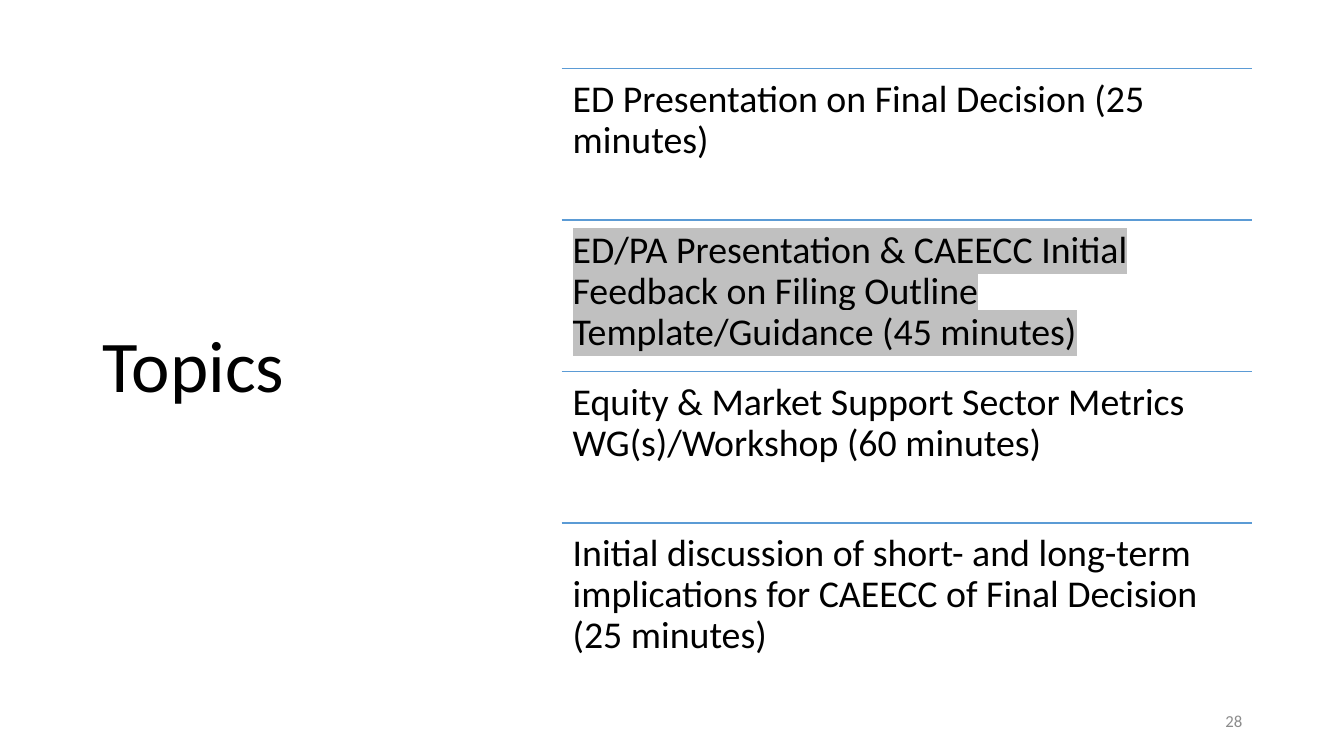
from lxml.etree import SubElement
from pptx import Presentation
from pptx.dml.color import RGBColor
from pptx.enum.shapes import MSO_CONNECTOR
from pptx.enum.text import MSO_ANCHOR, MSO_AUTO_SIZE, PP_ALIGN
from pptx.oxml import parse_xml
from pptx.oxml.ns import nsdecls, qn
from pptx.util import Inches, Pt

BLACK = RGBColor(0x00, 0x00, 0x00)
GRAY = RGBColor(0x8C, 0x8C, 0x8C)
BLUE = RGBColor(0x5B, 0x9B, 0xD5)
SILVER = RGBColor(0xC0, 0xC0, 0xC0)

TOPICS = [
    ("ED Presentation on Final Decision (25 minutes)", None),
    ("ED/PA Presentation & CAEECC Initial Feedback on Filing Outline "
     "Template/Guidance (45 minutes)", SILVER),
    ("Equity & Market Support Sector Metrics WG(s)/Workshop (60 minutes)", None),
    ("Initial discussion of short- and long-term implications for CAEECC "
     "of Final Decision (25 minutes)", None),
]
LIST_LEFT, LIST_TOP, LIST_WIDTH, ROW_HEIGHT = 5.57, 0.68, 6.85, 1.503


def write_text(shape, text, size, color=BLACK, align=PP_ALIGN.LEFT,
               anchor=MSO_ANCHOR.MIDDLE, line_spacing=0.9, inset=None, highlight=None):
    frame = shape.text_frame
    frame.word_wrap = True
    frame.auto_size = MSO_AUTO_SIZE.NONE
    frame.vertical_anchor = anchor
    if inset is not None:
        frame.margin_left = frame.margin_right = Inches(inset)
        frame.margin_top = frame.margin_bottom = Inches(inset)
    paragraph = frame.paragraphs[0]
    paragraph.alignment = align
    paragraph.line_spacing = line_spacing
    run = paragraph.add_run()
    run.text = text
    run.font.name = "Calibri"
    run.font.size = Pt(size)
    run.font.color.rgb = color
    if highlight is not None:
        fill = run.font._element.find(qn("a:solidFill"))
        fill.addnext(parse_xml(
            f'<a:highlight {nsdecls("a")}><a:srgbClr val="{highlight}"/></a:highlight>'))


presentation = Presentation()
presentation.slide_width = Inches(13.33)
presentation.slide_height = Inches(7.5)
slide = presentation.slides.add_slide(presentation.slide_layouts[5])

title = slide.shapes.title
title.left, title.top = Inches(0.92), Inches(0.61)
title.width, title.height = Inches(3.69), Inches(6.09)
write_text(title, "Topics", 52)

for row, (topic, highlight) in enumerate(TOPICS):
    top = Inches(LIST_TOP + row * ROW_HEIGHT)
    rule = slide.shapes.add_connector(
        MSO_CONNECTOR.STRAIGHT, Inches(LIST_LEFT), top, Inches(LIST_LEFT + LIST_WIDTH), top)
    rule.line.color.rgb = BLUE
    rule.line.width = Pt(1)
    SubElement(rule._element.spPr, qn("a:effectLst"))
    topic_box = slide.shapes.add_textbox(
        Inches(LIST_LEFT), top, Inches(LIST_WIDTH), Inches(ROW_HEIGHT))
    write_text(topic_box, topic, 27, anchor=MSO_ANCHOR.TOP, inset=0.11, highlight=highlight)

page_number = slide.shapes.add_textbox(Inches(9.42), Inches(6.95), Inches(3), Inches(0.4))
write_text(page_number, "28", 12, color=GRAY, align=PP_ALIGN.RIGHT, line_spacing=1.0)

presentation.save("out.pptx")
